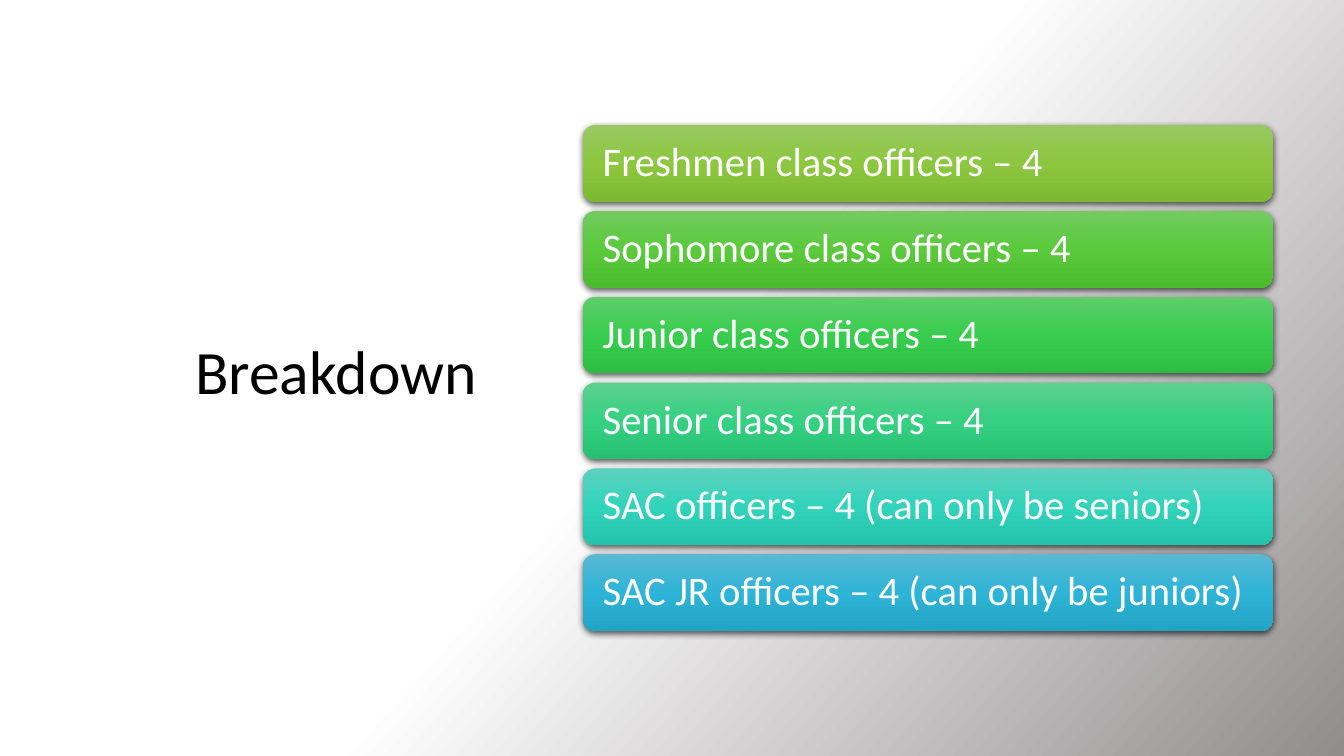
from lxml.etree import SubElement
from pptx import Presentation
from pptx.dml.color import RGBColor
from pptx.enum.shapes import MSO_SHAPE
from pptx.enum.text import MSO_ANCHOR, PP_ALIGN
from pptx.oxml.ns import qn
from pptx.util import Inches, Pt

FONT = "Calibri"
COLORS = {
    "title": "000000",
    "label": "FFFFFF",
    "shadow": "000000",
    "background": ("FFFFFF", "FFFFFF", "918D8D"),
    "lime": ("98C862", "8CC73F", "7DB831"),
    "leaf": ("72CB60", "5ACA3C", "4BBB2E"),
    "green": ("5ECD6A", "38CD4E", "2BBE40"),
    "emerald": ("5CD090", "35D082", "27C073"),
    "teal": ("5BD2BE", "32D3BB", "24C3AB"),
    "blue": ("59B8D4", "2EB4D6", "21A4C6"),
}
OFFICERS = [
    ("Freshmen class officers – 4", "lime"),
    ("Sophomore class officers – 4", "leaf"),
    ("Junior class officers – 4", "green"),
    ("Senior class officers – 4", "emerald"),
    ("SAC officers – 4 (can only be seniors)", "teal"),
    ("SAC JR officers – 4 (can only be juniors)", "blue"),
]


def add_color(parent, color, **attributes):
    tint = SubElement(parent, qn("a:srgbClr"), val=color)
    for name, value in attributes.items():
        SubElement(tint, qn("a:" + name), val=str(value))


def set_gradient(fill, owner, colors, angle):
    fill.gradient()
    fill.gradient_angle = 360 - angle
    stops = next(owner.iter(qn("a:gsLst")))
    for stop in list(stops):
        stops.remove(stop)
    for index, color in enumerate(colors):
        position = index * 100000 // (len(colors) - 1)
        add_color(SubElement(stops, qn("a:gs"), pos=str(position)), color)


def add_shadow(bar):
    bar.shadow.inherit = False
    effects = bar._element.spPr.find(qn("a:effectLst"))
    shadow = SubElement(effects, qn("a:outerShdw"), blurRad=str(Pt(4.5)),
                        dist=str(Pt(1.5)), dir="5400000", algn="ctr", rotWithShape="0")
    add_color(shadow, COLORS["shadow"], alpha=63000)


def write_text(frame, text, size, color, align):
    frame.word_wrap = True
    frame.vertical_anchor = MSO_ANCHOR.MIDDLE
    paragraph = frame.paragraphs[0]
    paragraph.text = text
    paragraph.alignment = align
    paragraph.line_spacing = 0.9
    paragraph.font.name = FONT
    paragraph.font.size = Pt(size)
    paragraph.font.color.rgb = RGBColor.from_string(COLORS[color])


def add_title(slide, left, top, width, height):
    title = slide.shapes.add_textbox(*map(Inches, (left, top, width, height)))
    write_text(title.text_frame, "Breakdown", 44, "title", PP_ALIGN.RIGHT)


def add_officer_list(slide, left, top, width, height, gap=0.09):
    bar_height = (height - gap * (len(OFFICERS) - 1)) / len(OFFICERS)
    for row, (label, color) in enumerate(OFFICERS):
        bar_top = top + row * (bar_height + gap)
        bar = slide.shapes.add_shape(
            MSO_SHAPE.ROUNDED_RECTANGLE,
            *map(Inches, (left, bar_top, width, bar_height)))
        set_gradient(bar.fill, bar._element.spPr, COLORS[color], 90)
        bar.line.fill.background()
        add_shadow(bar)
        frame = bar.text_frame
        frame.margin_left = frame.margin_right = Inches(0.16)
        write_text(frame, label, 29, "label", PP_ALIGN.LEFT)


def main():
    deck = Presentation()
    deck.slide_width, deck.slide_height = Inches(13.33), Inches(7.5)
    slide = deck.slides.add_slide(deck.slide_layouts[6])
    set_gradient(slide.background.fill, slide._element, COLORS["background"], 42)
    add_title(slide, 0.74, 2.26, 4.09, 2.91)
    add_officer_list(slide, 5.78, 1.24, 6.85, 5.02)
    deck.save("out.pptx")


if __name__ == "__main__":
    main()
